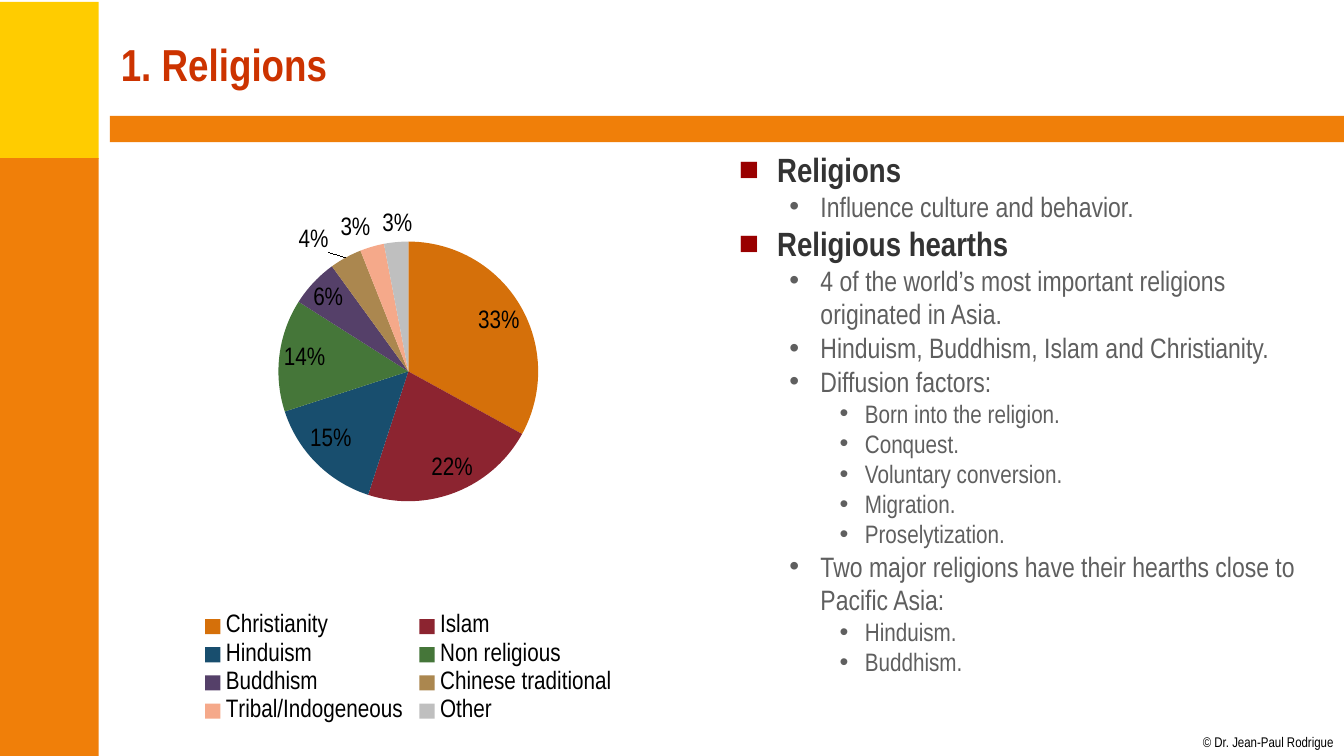
from lxml import etree
from pptx import Presentation
from pptx.chart.data import CategoryChartData
from pptx.dml.color import RGBColor
from pptx.enum.chart import XL_CHART_TYPE, XL_LABEL_POSITION, XL_LEGEND_POSITION
from pptx.enum.shapes import MSO_SHAPE
from pptx.enum.text import MSO_ANCHOR
from pptx.oxml.ns import qn
from pptx.util import Pt

PIE = XL_CHART_TYPE.PIE
BEST_FIT = XL_LABEL_POSITION.BEST_FIT
LEGEND_BOTTOM = XL_LEGEND_POSITION.BOTTOM
RECTANGLE = MSO_SHAPE.RECTANGLE
TOP, MIDDLE = MSO_ANCHOR.TOP, MSO_ANCHOR.MIDDLE

PX = 9144  # 100 px to the inch
FONT = "Arial Narrow"
YELLOW, ORANGE = "FFCC00", "F07F09"

# Faith, share in percent, slice colour
FAITHS = [
    ("Christianity", 33, "D5700A"),
    ("Islam", 22, "8C2430"),
    ("Hinduism", 15, "184E6E"),
    ("Non religious", 14, "457639"),
    ("Buddhism", 6, "554069"),
    ("Chinese traditional", 4, "AB874F"),
    ("Tribal/Indogeneous", 3, "F5A98A"),
    ("Other", 3, "BFBFBF"),
]

# Outline level, text
OUTLINE = [
    (0, "Religions"),
    (1, "Influence culture and behavior."),
    (0, "Religious hearths"),
    (1, "4 of the world’s most important religions originated in Asia."),
    (1, "Hinduism, Buddhism, Islam and Christianity."),
    (1, "Diffusion factors:"),
    (2, "Born into the religion."),
    (2, "Conquest."),
    (2, "Voluntary conversion."),
    (2, "Migration."),
    (2, "Proselytization."),
    (1, "Two major religions have their hearths close to Pacific Asia:"),
    (2, "Hinduism."),
    (2, "Buddhism."),
]

# Format of each outline level: indents in px, bullet, text
LEVELS = [
    dict(margin=38, hang=38, bullet="■", bullet_color="990000",
         size=24, color="333333", bold=True),
    dict(margin=81, hang=31, bullet="•", bullet_color="5F5F5F",
         size=20, color="5F5F5F"),
    dict(margin=125, hang=25, bullet="•", bullet_color="5F5F5F",
         size=18, color="5F5F5F"),
]


def rgb(color):
    return RGBColor.from_string(color)


def px(*lengths):
    return [length * PX for length in lengths]


def add_bar(slide, box, color):
    bar = slide.shapes.add_shape(RECTANGLE, *px(*box))
    bar.shadow.inherit = False
    bar.fill.solid()
    bar.fill.fore_color.rgb = rgb(color)
    bar.line.fill.background()


def add_frame(slide, box, anchor=TOP, wrap=True, inset=True):
    frame = slide.shapes.add_textbox(*px(*box)).text_frame
    frame.word_wrap = wrap
    frame.vertical_anchor = anchor
    if not inset:
        frame.margin_left = frame.margin_right = 0
        frame.margin_top = frame.margin_bottom = 0
    return frame


def set_bullet(paragraph, margin, hang, bullet, color):
    properties = paragraph._p.get_or_add_pPr()
    properties.set("marL", str(margin * PX))
    properties.set("indent", str(-hang * PX))
    bullet_color = etree.SubElement(properties, qn("a:buClr"))
    etree.SubElement(bullet_color, qn("a:srgbClr"), val=color)
    etree.SubElement(properties, qn("a:buFont"), typeface="Arial")
    etree.SubElement(properties, qn("a:buChar"), char=bullet)


def write(paragraph, text, size, color, bold=False, bullet=None,
          bullet_color=None, margin=0, hang=0):
    if bullet:
        set_bullet(paragraph, margin, hang, bullet, bullet_color)
    run = paragraph.add_run()
    run.text = text
    run.font.name = FONT
    run.font.size = Pt(size)
    run.font.bold = bold
    run.font.color.rgb = rgb(color)


def place_plot(chart, x, y, w, h):
    """Fix the pie's inner area as fractions of the chart."""
    plot_area = chart._chartSpace.chart.plotArea
    for old in plot_area.findall(qn("c:layout")):
        plot_area.remove(old)
    layout = etree.Element(qn("c:layout"))
    plot_area.insert(0, layout)
    manual = etree.SubElement(layout, qn("c:manualLayout"))
    settings = dict(layoutTarget="inner", xMode="edge", yMode="edge",
                    x=x, y=y, w=w, h=h)
    for tag, value in settings.items():
        etree.SubElement(manual, qn("c:" + tag), val=str(value))


def add_backdrop(slide, box):
    """Side column, rule under the title and copyright line."""
    left, top, width, height = box
    add_bar(slide, (left - 2, top + 2, 100, 156), YELLOW)
    add_bar(slide, (left - 2, top + 157, 100, height - 157), ORANGE)
    add_bar(slide, (left + 109, top + 115, width - 109, 26), ORANGE)
    credit = add_frame(slide, (left + width - 140, top + height - 22, 131, 17),
                       wrap=False, inset=False)
    write(credit.paragraphs[0], "© Dr. Jean-Paul Rodrigue", 10, "000000")


def add_title(slide, box):
    title = add_frame(slide, box, anchor=MIDDLE)
    write(title.paragraphs[0], "1. Religions", 32, "CC3300", bold=True)


def add_faith_pie(slide, box):
    """Pie of the shares of the world's religions."""
    shares = CategoryChartData()
    shares.categories = [faith for faith, _, _ in FAITHS]
    shares.add_series("Series 1", [share for _, share, _ in FAITHS])
    chart = slide.shapes.add_chart(PIE, *px(*box), shares).chart
    chart.has_title = False
    chart.font.name = FONT
    chart.font.size = Pt(18)
    chart.font.color.rgb = rgb("000000")
    chart.has_legend = True
    chart.legend.position = LEGEND_BOTTOM
    chart.legend.include_in_layout = False
    place_plot(chart, 0.2, 0.167, 0.6, 0.445)

    # Slices
    chart.plots[0].vary_by_categories = True
    series = chart.plots[0].series[0]
    for index, (_, _, color) in enumerate(FAITHS):
        fill = series.points[index].format.fill
        fill.solid()
        fill.fore_color.rgb = rgb(color)

    # Percent labels
    labels = series.data_labels
    labels.show_value = False
    labels.show_percentage = True
    labels.number_format = "0%"
    labels.number_format_is_linked = False
    labels.position = BEST_FIT


def add_outline(slide, box):
    """Bulleted notes in three levels."""
    frame = add_frame(slide, box)
    for index, (level, text) in enumerate(OUTLINE):
        paragraph = frame.add_paragraph() if index else frame.paragraphs[0]
        paragraph.level = level
        write(paragraph, text, **LEVELS[level])


def main():
    deck = Presentation()
    deck.slide_width, deck.slide_height = px(1333, 750)
    slide = deck.slides.add_slide(deck.slide_layouts[6])
    add_backdrop(slide, (0, 0, 1333, 750))
    add_title(slide, (110, 11, 1200, 104))
    add_faith_pie(slide, (110, 143, 590, 579))
    add_outline(slide, (723, 143, 590, 579))
    deck.save("out.pptx")


if __name__ == "__main__":
    main()
